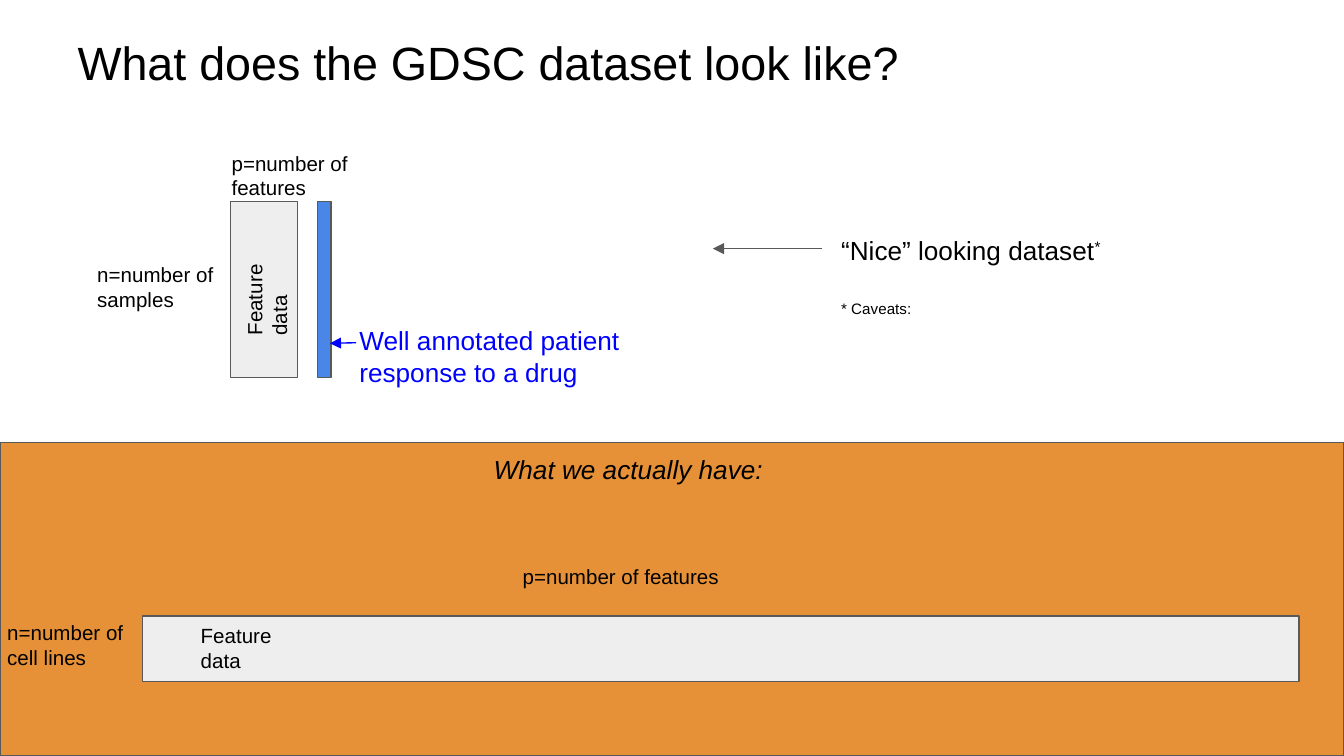
from lxml.etree import SubElement
from pptx import Presentation
from pptx.dml.color import RGBColor
from pptx.enum.shapes import MSO_CONNECTOR as Conn, MSO_SHAPE as Shape
from pptx.oxml.ns import qn
from pptx.util import Pt

PX = 4572  # 200 px to the inch
W, H = 2000, 1125
INSET = 20
BODY, SMALL, TITLE = 14, 11, 25

BLACK = RGBColor(0x00, 0x00, 0x00)
GREY = RGBColor(0x59, 0x59, 0x59)
LIGHT = RGBColor(0xEE, 0xEE, 0xEE)
ORANGE = RGBColor(0xE6, 0x91, 0x38)
BAR_BLUE = RGBColor(0x4A, 0x86, 0xE8)
BLUE = RGBColor(0x00, 0x00, 0xFF)


def emu(*lengths):
    return [n * PX for n in lengths]


def style(r, size, color):
    r.font.name = "Arial"
    r.font.size = Pt(size)
    r.font.color.rgb = color


def add_text(s, x, y, w, h, text, size=SMALL, color=BLACK):
    sp = s.shapes.add_textbox(*emu(x, y, w, h))
    tf = sp.text_frame
    tf.word_wrap = True
    tf.margin_left = tf.margin_right = tf.margin_top = tf.margin_bottom = INSET * PX
    tf.text = text
    for r in tf.paragraphs[0].runs:
        style(r, size, color)
    return sp


def add_rect(s, x, y, w, h, fill):
    sp = s.shapes.add_shape(Shape.RECTANGLE, *emu(x, y, w, h))
    sp.shadow.inherit = False
    sp.fill.solid()
    sp.fill.fore_color.rgb = fill
    sp.line.color.rgb = GREY
    sp.line.width = Pt(0.75)


def add_arrow(s, x1, y1, x2, y2, color):
    cxn = s.shapes.add_connector(Conn.STRAIGHT, *emu(x1, y1, x2, y2))
    cxn.line.color.rgb = color
    cxn.line.width = Pt(0.75)
    SubElement(cxn.get_or_add_ln(), qn("a:tailEnd"), type="triangle")
    SubElement(cxn._element.spPr, qn("a:effectLst"))


def add_tall_dataset(s, x, y, w, h):
    """Narrow feature matrix with a response bar to its right."""
    add_rect(s, x, y, w, h, LIGHT)
    add_text(s, x - 218, y + 70, 254, 104, "n=number of samples")
    add_text(s, x - 18, y - 96, 254, 162, "p=number of features")
    label = add_text(s, x - 43, y + 83, 176, 96, "Feature data")
    label.rotation = 270
    bar_x = x + w + 30
    add_rect(s, bar_x, y, 20, h, BAR_BLUE)
    add_arrow(s, bar_x + 57, y + 210, bar_x + 18, y + 211, BLUE)
    add_text(s, bar_x + 42, y + 163, 450, 128,
             "Well annotated patient response to a drug", BODY, BLUE)


def add_verdict(s, x, y, w, h):
    add_arrow(s, x - 9, y + 41, x - 171, y + 41, GREY)
    tf = add_text(s, x, y, w, h, "“Nice” looking dataset", BODY).text_frame
    caveats = tf.add_paragraph()
    caveats.space_before = Pt(16.5)
    for p, text in ((tf.paragraphs[0], "*"), (caveats, "* Caveats:")):
        r = p.add_run()
        r.text = text
        style(r, BODY, BLACK)
        r.font._element.set("baseline", "30000")


def add_wide_dataset(s, x, y, w, h):
    """Orange band with a wide, short feature matrix."""
    add_rect(s, x, y, w, h, ORANGE)
    add_rect(s, x + 212, y + 258, w - 279, 97, LIGHT)
    add_text(s, x + 279, y + 248, 176, 96, "Feature data")
    add_text(s, x - 9, y + 244, 254, 104, "n=number of cell lines")
    add_text(s, x + 758, y + 162, 350, 82, "p=number of features")
    heading = add_text(s, x + 715, y - 4, 528, 104, "What we actually have:", BODY)
    heading.text_frame.paragraphs[0].runs[0].font.italic = True


def main():
    prs = Presentation()
    prs.slide_width, prs.slide_height = emu(W, H)
    s = prs.slides.add_slide(prs.slide_layouts[6])
    add_wide_dataset(s, 0, 659, W, H - 659)
    add_tall_dataset(s, 343, 300, 100, 262)
    add_verdict(s, 1232, 329, 616, 244)
    add_text(s, 96, 30, 1574, 104, "What does the GDSC dataset look like?", TITLE)
    prs.save("out.pptx")


if __name__ == "__main__":
    main()
